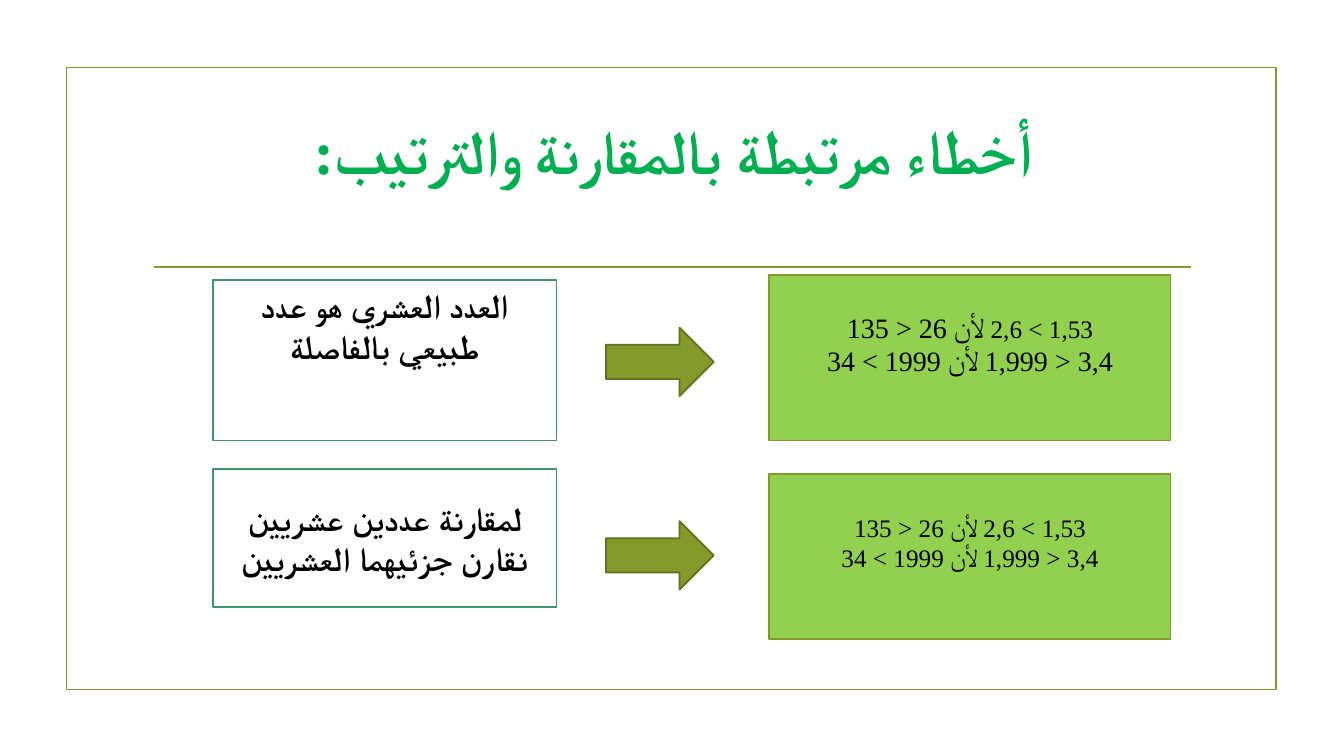
from dataclasses import dataclass

from lxml.etree import SubElement
from pptx import Presentation
from pptx.dml.color import RGBColor
from pptx.enum.shapes import MSO_CONNECTOR, MSO_SHAPE
from pptx.enum.text import MSO_ANCHOR, MSO_AUTO_SIZE, PP_ALIGN
from pptx.oxml.ns import qn
from pptx.util import Inches, Pt


@dataclass(frozen=True)
class Theme:
    """Colours, type sizes and font of the slide."""
    font: str = "Times New Roman"
    olive: str = "83992A"
    dark_olive: str = "61711F"
    teal: str = "3C9770"
    lime: str = "92D050"
    title: str = "00B050"
    white: str = "FFFFFF"
    black: str = "000000"
    title_size: int = 44
    error_size: int = 24
    large_example: int = 20
    example: int = 18
    line: float = 1.25


THEME = Theme()
ERROR_LEFT, ERROR_WIDTH = 2.11, 3.41
ARROW_LEFT, ARROW_WIDTH, ARROW_HEIGHT = 6.01, 1.07, 0.68
EXAMPLE_LEFT, EXAMPLE_WIDTH, EXAMPLE_HEIGHT = 7.63, 3.98, 1.64

TITLE = "أخطاء مرتبطة بالمقارنة والترتيب:"
NATURAL_ERROR = "العدد العشري هو عدد طبيعي بالفاصلة"
DECIMAL_ERROR = "لمقارنة عددين عشريين نقارن جزئيهما العشريين"
EXAMPLES = [["1,53 > 2,6", " لأن 26 < 135"], ["3,4 < 1,999 لأن 1999 > 34"]]


def place(shape, left, top, width, height):
    """Move and size a shape, in inches."""
    shape.left, shape.top = Inches(left), Inches(top)
    shape.width, shape.height = Inches(width), Inches(height)


def paint(shape, fill, line):
    """Set the fill and outline of a shape."""
    if fill:
        shape.fill.solid()
        shape.fill.fore_color.rgb = RGBColor.from_string(fill)
    else:
        shape.fill.background()
    shape.line.color.rgb = RGBColor.from_string(line)
    shape.line.width = Pt(THEME.line)


def add_box(slide, preset, bounds, fill, line):
    """Add a flat preset shape."""
    box = slide.shapes.add_shape(preset, *map(Inches, bounds))
    box.shadow.inherit = False
    paint(box, fill, line)
    return box


def write(shape, lines, size, color, bold=False, rtl=False, anchor=MSO_ANCHOR.MIDDLE):
    """Write centred lines, each a list of runs, into a shape."""
    frame = shape.text_frame
    frame.word_wrap = True
    frame.auto_size = MSO_AUTO_SIZE.NONE
    frame.vertical_anchor = anchor
    for index, runs in enumerate(lines):
        paragraph = frame.add_paragraph() if index else frame.paragraphs[0]
        for text in runs:
            paragraph.add_run().text = text
        paragraph.alignment = PP_ALIGN.CENTER
        paragraph.space_before = Pt(0)
        properties = paragraph._p.get_or_add_pPr()
        if rtl:
            properties.set("rtl", "1")
        if shape.is_placeholder:
            properties.set("marL", "0")
            properties.set("indent", "0")
            SubElement(properties, qn("a:buNone"))
        font = paragraph.font
        font.name, font.size, font.bold = THEME.font, Pt(size), bold
        font.color.rgb = RGBColor.from_string(color)
        script_font = SubElement(properties.find(qn("a:defRPr")), qn("a:cs"))
        script_font.set("typeface", THEME.font)


def add_rule(slide):
    """Add the rule under the title."""
    rule = slide.shapes.add_connector(
        MSO_CONNECTOR.STRAIGHT, Inches(1.53), Inches(2.65), Inches(11.81), Inches(2.65))
    rule.line.color.rgb = RGBColor.from_string(THEME.olive)
    rule.line.width = Pt(THEME.line)
    SubElement(rule._element.spPr, qn("a:effectLst"))


def add_error(error, text, anchor):
    """Fill a box with the description of an error."""
    paint(error, THEME.white, THEME.teal)
    write(error, [[text]], THEME.error_size, THEME.black, bold=True, anchor=anchor)


def add_arrow(slide, top):
    """Add the arrow from an error to its examples."""
    add_box(slide, MSO_SHAPE.RIGHT_ARROW, (ARROW_LEFT, top, ARROW_WIDTH, ARROW_HEIGHT),
            THEME.olive, THEME.dark_olive)


def add_examples(slide, top, size):
    """Add the green box of examples and return it."""
    box = add_box(slide, MSO_SHAPE.RECTANGLE,
                  (EXAMPLE_LEFT, top, EXAMPLE_WIDTH, EXAMPLE_HEIGHT),
                  THEME.lime, THEME.olive)
    box.text_frame.margin_bottom = Inches(0.33)
    write(box, EXAMPLES, size, THEME.black, rtl=True)
    return box


def main():
    """Build and save the slide."""
    deck = Presentation()
    deck.slide_width, deck.slide_height = Inches(13.33), Inches(7.5)
    slide = deck.slides.add_slide(deck.slide_layouts[1])
    title, natural_error = slide.placeholders

    add_box(slide, MSO_SHAPE.RECTANGLE, (0.66, 0.67, 12, 6.17), None, THEME.olive)
    add_rule(slide)
    place(title, 1.42, 1.07, 10.5, 1.43)
    write(title, [[TITLE]], THEME.title_size, THEME.title, bold=True, rtl=True,
          anchor=MSO_ANCHOR.TOP)

    place(natural_error, ERROR_LEFT, 2.78, ERROR_WIDTH, 1.59)
    add_error(natural_error, NATURAL_ERROR, MSO_ANCHOR.TOP)
    add_arrow(slide, 3.25)
    natural_examples = add_examples(slide, 2.73, THEME.large_example)
    first_comparison = natural_examples.text_frame.paragraphs[0].runs[0]
    first_comparison.font.size = Pt(THEME.example)

    decimal_error = add_box(slide, MSO_SHAPE.RECTANGLE,
                            (ERROR_LEFT, 4.65, ERROR_WIDTH, 1.37),
                            THEME.white, THEME.teal)
    add_error(decimal_error, DECIMAL_ERROR, MSO_ANCHOR.MIDDLE)
    add_arrow(slide, 5.17)
    add_examples(slide, 4.7, THEME.example)

    deck.save("out.pptx")


if __name__ == "__main__":
    main()
